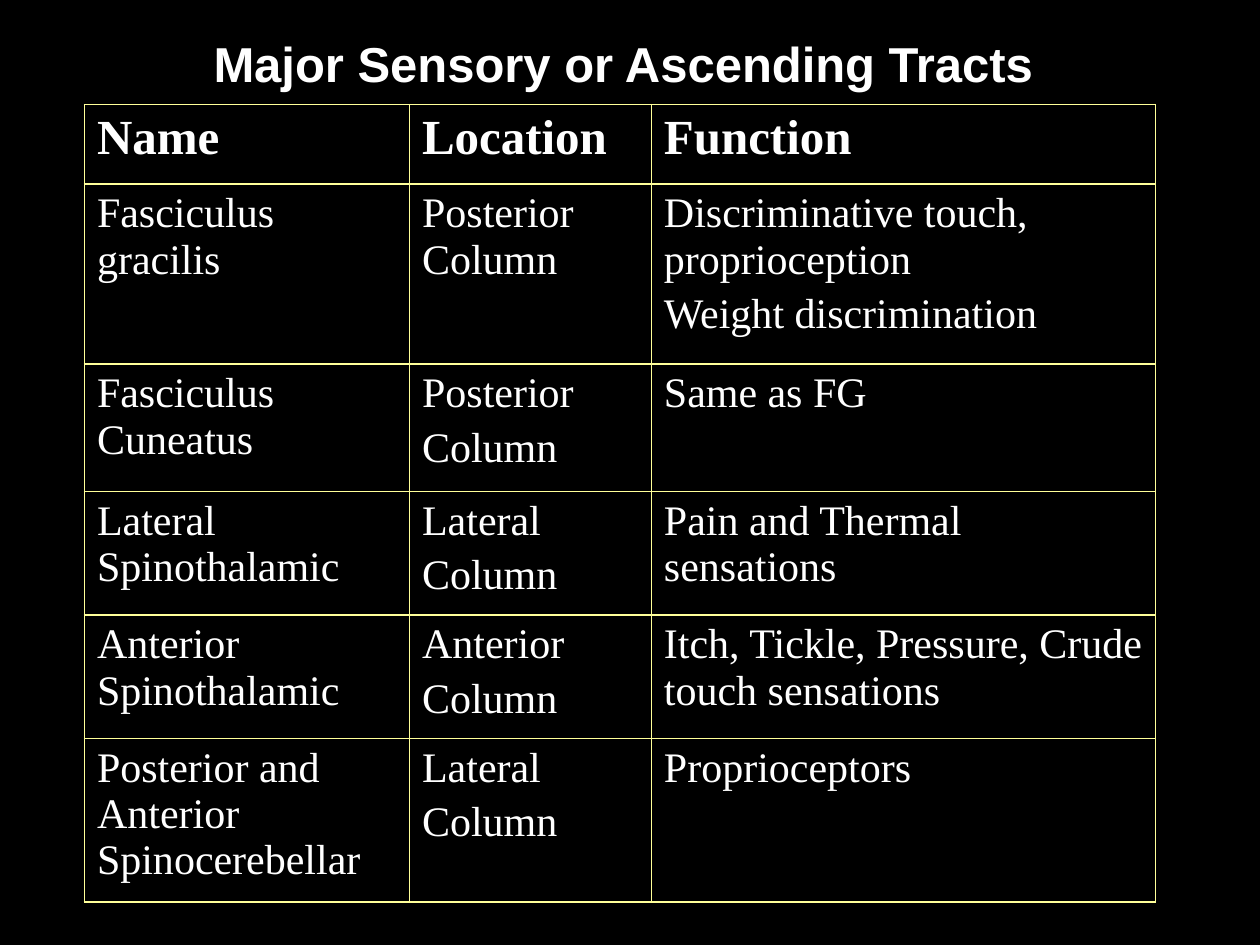
from lxml.etree import SubElement
from pptx import Presentation
from pptx.dml.color import RGBColor
from pptx.enum.text import MSO_ANCHOR, PP_ALIGN
from pptx.oxml.ns import qn
from pptx.util import Inches, Pt

WIDE, HIGH = Inches(10), Inches(7.5)
COLS = [25.8, 19.2, 40]
ROWS = [8.4, 19.07, 13.47, 13.07, 13.07, 16.13]
TITLE = {"name": "Arial", "size": Pt(28), "bold": True}
HEAD = {"name": "Times New Roman", "size": Pt(28), "bold": True}
BODY = {"name": "Times New Roman", "size": Pt(24), "bold": False}
TRACTS = [
    ["Name", "Location", "Function"],
    ["Fasciculus gracilis", "Posterior Column",
     "Discriminative touch, proprioception\nWeight discrimination"],
    ["Fasciculus Cuneatus", "Posterior\nColumn", "Same as FG"],
    ["Lateral Spinothalamic", "Lateral\nColumn", "Pain and Thermal sensations"],
    ["Anterior Spinothalamic", "Anterior\nColumn",
     "Itch, Tickle, Pressure, Crude touch sensations"],
    ["Posterior and Anterior Spinocerebellar", "Lateral\nColumn", "Proprioceptors"],
]


def paint(fill, tone):
    """Give a fill one solid colour from a hex string."""
    fill.solid()
    fill.fore_color.rgb = RGBColor.from_string(tone)


def across(share):
    """Turn a percentage of the slide's width into a length."""
    return int(WIDE * share / 100)


def down(share):
    """Turn a percentage of the slide's height into a length."""
    return int(HIGH * share / 100)


def write(frame, text, form, align=PP_ALIGN.LEFT):
    """Write each line of text as a paragraph in the given format."""
    frame.word_wrap = True
    frame.text = text
    for i, para in enumerate(frame.paragraphs):
        para.alignment = align
        if i:
            para.space_before = Pt(4.8)
        font = para.runs[0].font
        for key, value in form.items():
            setattr(font, key, value)
        paint(font.fill, "FFFFFF")


def edge(cell, tone):
    """Draw a one-point line on all four sides of a cell."""
    props = cell._tc.get_or_add_tcPr()
    for side in "LRTB":
        line = SubElement(props, qn("a:ln" + side), w=str(Pt(1)))
        solid = SubElement(line, qn("a:solidFill"))
        SubElement(solid, qn("a:srgbClr"), val=tone)


def head(slide):
    """Add the centred heading."""
    box = slide.shapes.add_textbox(0, down(3.33), WIDE, down(6.67))
    box.text_frame.vertical_anchor = MSO_ANCHOR.MIDDLE
    write(box.text_frame, "Major Sensory or Ascending Tracts ", TITLE, PP_ALIGN.CENTER)


def grid(slide):
    """Add the table of tracts."""
    table = slide.shapes.add_table(
        len(ROWS), len(COLS), across(6.7), down(11.07),
        across(sum(COLS)), down(sum(ROWS))).table
    table.first_row = table.horz_banding = False
    for col, share in zip(table.columns, COLS):
        col.width = across(share)
    for i, (row, share) in enumerate(zip(table.rows, ROWS)):
        row.height = down(share)
        for cell, text in zip(row.cells, TRACTS[i]):
            edge(cell, "FFFF99")
            paint(cell.fill, "000000")
            write(cell.text_frame, text, BODY if i else HEAD)


def main():
    """Build and save the slide."""
    deck = Presentation()
    deck.slide_width, deck.slide_height = WIDE, HIGH
    slide = deck.slides.add_slide(deck.slide_layouts[6])
    paint(slide.background.fill, "000000")
    head(slide)
    grid(slide)
    deck.save("out.pptx")


if __name__ == "__main__":
    main()
